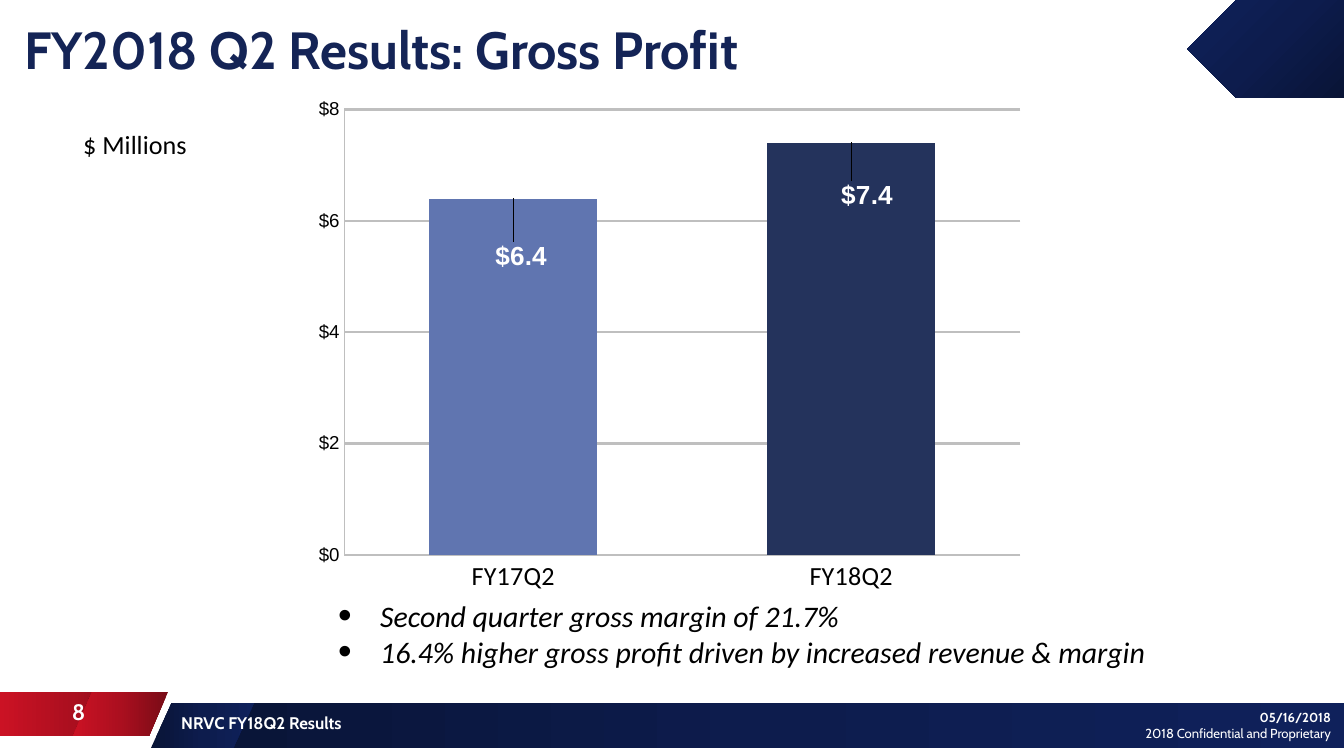
"""Builds the gross profit results slide with a column chart and key points."""
from copy import deepcopy

from lxml import etree
from pptx import Presentation
from pptx import util as u
from pptx.chart.data import CategoryChartData
from pptx.dml.color import RGBColor
from pptx.enum import chart as charts, shapes, text
from pptx.oxml import parse_xml
from pptx.oxml.ns import nsdecls, qn

SCALE = 914400 / 134.4
COLOURS = {
    "title": "142456", "black": "000000", "white": "FFFFFF", "grid": "BFBFBF",
    "series": "4C5680", "prior": "6075B0", "current": "24335C",
}
NAVY = ("091436", "0D1C4D", "0F215B")
RED = ("780B16", "AB0F1F", "CB1224")
PLATE = shapes.MSO_SHAPE.PENTAGON
RECT = shapes.MSO_SHAPE.RECTANGLE
SLANT = shapes.MSO_SHAPE.FLOWCHART_DATA
LEFT, CENTRE, RIGHT = text.PP_ALIGN.LEFT, text.PP_ALIGN.CENTER, text.PP_ALIGN.RIGHT
TOP, MIDDLE = text.MSO_ANCHOR.TOP, text.MSO_ANCHOR.MIDDLE

TITLE = ("FY2018 Q2 Results: Gross Profit", (11, 0, 1165, 98))
BANDS = [
    (PLATE, (1187, 0, 157, 98), NAVY, 45, 180),
    (RECT, (0, 692, 145, 44), RED, 180, 0),
    (SLANT, (73, 692, 95, 44), RED, 180, 0),
    (RECT, (181, 703, 1163, 45), NAVY, 0, 0),
    (SLANT, (151, 703, 103, 45), NAVY, 0, 0),
]
UNIT = [("$ Millions", {"size": 14})]
POINTS = [
    ("Second quarter gross margin of 21.7%", {"size": 16, "italic": True}),
    ("16.4% higher gross profit driven by increased revenue & margin",
     {"size": 16, "italic": True}),
]
FOOTER = {"name": "Cabin", "colour": "white"}
NUMBER = [("8", {"size": 12, "bold": True, **FOOTER})]
REPORT = [("NRVC FY18Q2 Results", {"size": 9, "bold": True, **FOOTER})]
NOTICE = [
    ("05/16/2018", {"size": 7, "bold": True, **FOOTER}),
    ("2018 Confidential and Proprietary", {"size": 7, "bold": False, **FOOTER}),
]
CHART_BOX = (258, 77, 786, 543)
PLOT_AREA = (0.11, 0.06, 0.86, 0.82)
COLUMNS = [
    ("FY17Q2", 6.4, "prior", (8, 39)),
    ("FY18Q2", 7.4, "current", (14, 30)),
]


def px(value):
    return u.Emu(round(value * SCALE))


def place(box):
    return [px(value) for value in box]


def rgb(name):
    return RGBColor.from_string(COLOURS.get(name, name))


def style(font, size, name="Calibri", colour="black", bold=False, italic=False):
    font.size, font.name = u.Pt(size), name
    font.bold, font.italic = bold, italic
    font.color.rgb = rgb(colour)


def add_band(slide, kind, box, stops, angle, rotation):
    band = slide.shapes.add_shape(kind, *place(box))
    band.shadow.inherit = False
    band.line.fill.background()
    band.rotation = rotation
    band.fill.gradient()
    stop_list = band.fill.gradient_stops[0]._gs.getparent()
    stop_list.append(deepcopy(stop_list[-1]))
    for index, (stop, colour) in enumerate(zip(band.fill.gradient_stops, stops)):
        stop.position = index / 2
        stop.color.rgb = rgb(colour)
    band.fill.gradient_angle = (360 - angle) % 360


def add_bullet(para):
    props = para._p.get_or_add_pPr()
    props.set("marL", str(px(42)))
    props.set("indent", str(px(-42)))
    etree.SubElement(props, qn("a:buSzPct")).set("val", "130000")
    etree.SubElement(props, qn("a:buFont")).set("typeface", "Arial")
    etree.SubElement(props, qn("a:buChar")).set("char", "•")


def add_text(slide, box, lines, align=LEFT, anchor=TOP, bullets=False):
    frame = slide.shapes.add_textbox(*place(box)).text_frame
    frame.word_wrap = True
    frame.vertical_anchor = anchor
    for index, (words, look) in enumerate(lines):
        para = frame.add_paragraph() if index else frame.paragraphs[0]
        para.alignment = align
        if bullets:
            add_bullet(para)
        span = para.add_run()
        span.text = words
        style(span.font, **look)


def manual_layout(x, y, w=None, h=None):
    parts = [] if w is None else [
        ("layoutTarget", "inner"), ("xMode", "edge"), ("yMode", "edge")]
    parts += [("x", x), ("y", y)]
    parts += [] if w is None else [("w", w), ("h", h)]
    body = "".join(f'<c:{tag} val="{value}"/>' for tag, value in parts)
    return parse_xml(f'<c:layout {nsdecls("c")}><c:manualLayout>{body}'
                     '</c:manualLayout></c:layout>')


def add_profit_chart(slide):
    data = CategoryChartData(number_format='"$"#,##0.0')
    data.categories = [column[0] for column in COLUMNS]
    data.add_series("Series 1", [column[1] for column in COLUMNS])
    chart = slide.shapes.add_chart(
        charts.XL_CHART_TYPE.COLUMN_CLUSTERED, *place(CHART_BOX), data).chart
    chart.has_legend = chart.has_title = False
    style(chart.font, 10)
    area = chart._chartSpace.chart.plotArea
    for old in area.findall(qn("c:layout")):
        area.remove(old)
    area.insert(0, manual_layout(*PLOT_AREA))

    for axis, size, font in ((chart.category_axis, 14, "Calibri"),
                             (chart.value_axis, 10, "Arial")):
        axis.major_tick_mark = axis.minor_tick_mark = charts.XL_TICK_MARK.NONE
        style(axis.tick_labels.font, size, font)
    chart.category_axis.format.line.fill.background()
    values = chart.value_axis
    values.minimum_scale, values.maximum_scale, values.major_unit = 0, 8, 2
    values.tick_labels.number_format = '"$"#,##0'
    values.tick_labels.number_format_is_linked = False
    for line, width in ((values.format.line, 0.75),
                        (values.major_gridlines.format.line, 1.25)):
        line.color.rgb = rgb("grid")
        line.width = u.Pt(width)

    plot = chart.plots[0]
    plot.gap_width, plot.vary_by_categories = 101, False
    series = plot.series[0]
    series.format.fill.solid()
    series.format.fill.fore_color.rgb = rgb("series")
    for index, (_, _, colour, (right, down)) in enumerate(COLUMNS):
        point = series.points[index]
        point.format.fill.solid()
        point.format.fill.fore_color.rgb = rgb(colour)
        label = point.data_label
        style(label.font, 14, "Arial", "white", bold=True)
        label.position = charts.XL_LABEL_POSITION.INSIDE_END
        shift = manual_layout(round(right / CHART_BOX[2], 2),
                              round(down / CHART_BOX[3], 2))
        label._dLbl.find(qn("c:idx")).addnext(shift)


def main():
    deck = Presentation()
    deck.slide_width, deck.slide_height = px(1344), px(756)
    page = deck.slides.add_slide(deck.slide_layouts[5])
    for band in BANDS:
        add_band(page, *band)

    words, box = TITLE
    title = page.shapes.title
    title.left, title.top, title.width, title.height = place(box)
    frame = title.text_frame
    frame.auto_size = text.MSO_AUTO_SIZE.NONE
    frame.vertical_anchor = MIDDLE
    para = frame.paragraphs[0]
    para.alignment = LEFT
    span = para.add_run()
    span.text = words
    style(span.font, 28, "Cabin", "title", bold=True)

    add_text(page, (70, 122, 426, 54), UNIT)
    add_profit_chart(page)
    add_text(page, (325, 591, 918, 86), POINTS, bullets=True)
    add_text(page, (0, 692, 157, 40), NUMBER, CENTRE)
    add_text(page, (168, 703, 930, 40), REPORT, anchor=MIDDLE)
    add_text(page, (1098, 703, 246, 40), NOTICE, RIGHT)
    deck.save("out.pptx")


if __name__ == "__main__":
    main()
